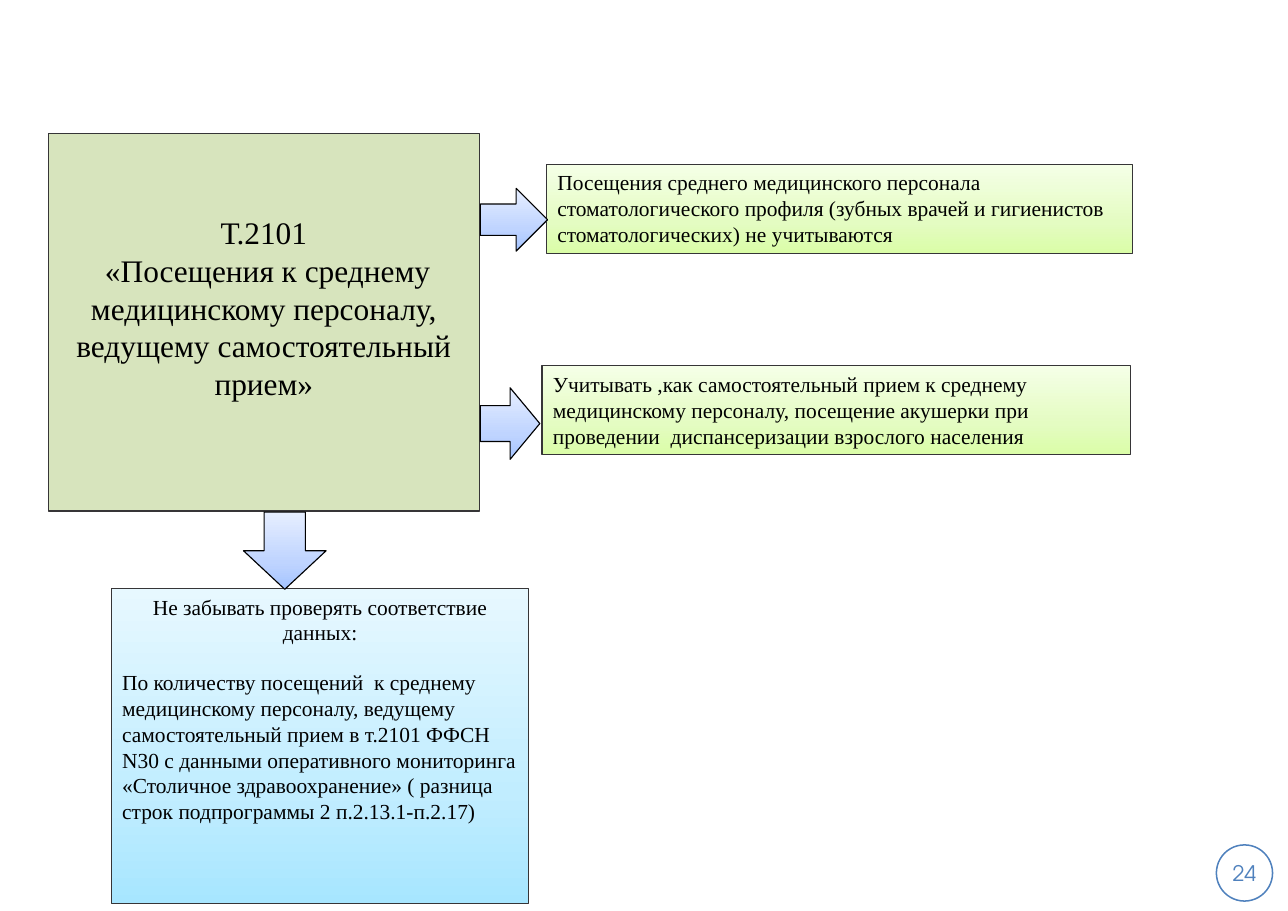
from copy import deepcopy

from pptx import Presentation
from pptx.dml.color import RGBColor
from pptx.enum.shapes import MSO_SHAPE
from pptx.enum.text import MSO_ANCHOR, PP_ALIGN
from pptx.util import Pt

RECT, OVAL = MSO_SHAPE.RECTANGLE, MSO_SHAPE.OVAL
RIGHT, DOWN = MSO_SHAPE.RIGHT_ARROW, MSO_SHAPE.DOWN_ARROW
TOP, MIDDLE = MSO_ANCHOR.TOP, MSO_ANCHOR.MIDDLE
LEFT, CENTER = PP_ALIGN.LEFT, PP_ALIGN.CENTER
PX = 9144
SERIF, SANS = "Times New Roman", "TeX Gyre Adventor"
BLACK, EDGE, BLUE = "000000", "363537", "4F81BD"
SAGE = ["D7E4BD"]
LIME = ["DAFDA7", "E4FCC2", "F5FFE7"]
SKY = ["A7E6FF", "C1EDFF", "E7F8FF"]
STEEL = ["A4C4FF", "BFD4FF", "E6EEFF"]


def color(text):
    """Turn a hex string into a colour."""
    return RGBColor.from_string(text)


def paint(fill, tones):
    """Fill with nothing, one tone, or three tones rising from the bottom."""
    if not tones:
        fill.background()
    elif len(tones) == 1:
        fill.solid()
        fill.fore_color.rgb = color(tones[0])
    else:
        fill.gradient()
        fill.gradient_angle = 90
        first = fill.gradient_stops[0]._gs
        first.addnext(deepcopy(first))
        for stop, place, tone in zip(fill.gradient_stops, (0, 0.35, 1), tones):
            stop.position = place
            stop.color.rgb = color(tone)


def block(slide, kind, box, tones, edge=EDGE, width=0.75):
    """Draw one filled and outlined shape."""
    shape = slide.shapes.add_shape(kind, *(n * PX for n in box))
    shape.shadow.inherit = False
    paint(shape.fill, tones)
    shape.line.color.rgb = color(edge)
    shape.line.width = Pt(width)
    return shape


def write(shape, lines, size, face=SERIF, tone=BLACK, anchor=TOP, pads=(10, 5, 10, 5)):
    """Set lines of (text, alignment, space before) in a shape."""
    frame = shape.text_frame
    frame.word_wrap = True
    frame.vertical_anchor = anchor
    (frame.margin_left, frame.margin_top,
     frame.margin_right, frame.margin_bottom) = (n * PX for n in pads)
    for i, (text, align, gap) in enumerate(lines):
        par = frame.add_paragraph() if i else frame.paragraphs[0]
        par.text = text
        par.alignment = align
        par.space_before = Pt(gap)
        par.font.size = Pt(size)
        par.font.name = face
        par.font.color.rgb = color(tone)


def topic(slide, box):
    """Place the main block that names the table."""
    write(block(slide, RECT, box, SAGE), [
        ("Т.2101", CENTER, 0),
        (" «Посещения к среднему медицинскому персоналу, "
         "ведущему самостоятельный прием»", CENTER, 0),
    ], 20.5, pads=(10, 73, 10, 5))


def rule(slide, box, text):
    """Place one green rule."""
    write(block(slide, RECT, box, LIME), [(text, LEFT, 0)], 14)


def check(slide, box):
    """Place the blue reminder."""
    write(block(slide, RECT, box, SKY), [
        ("Не забывать проверять соответствие данных:", CENTER, 0),
        ("По количеству посещений  к среднему медицинскому персоналу, ведущему "
         "самостоятельный прием в т.2101 ФФСН N30 c данными оперативного "
         "мониторинга", LEFT, 16),
        ("«Столичное здравоохранение» ( разница строк подпрограммы 2 "
         "п.2.13.1-п.2.17)", LEFT, 0),
    ], 14)


def badge(slide, box):
    """Place the page number in its ring."""
    ring = block(slide, OVAL, box, [], BLUE, 1)
    write(ring, [("24", CENTER, 0)], 14, SANS, BLUE, MIDDLE, (0, 0, 0, 0))


def main():
    """Build and save the slide."""
    deck = Presentation()
    deck.slide_width, deck.slide_height = 1169 * PX, 827 * PX
    slide = deck.slides.add_slide(deck.slide_layouts[6])
    badge(slide, (1104, 767, 51, 51))
    topic(slide, (44, 121, 391, 343))
    rule(slide, (496, 149, 532, 81),
         "Посещения среднего медицинского персонала стоматологического профиля "
         "(зубных врачей и гигиенистов стоматологических) не учитываются")
    rule(slide, (492, 332, 534, 81),
         "Учитывать ,как самостоятельный прием к среднему медицинскому персоналу, "
         "посещение акушерки при проведении  диспансеризации взрослого населения")
    check(slide, (101, 534, 379, 286))
    for kind, box in ((RIGHT, (436, 171, 61, 57)), (RIGHT, (436, 352, 54, 65)),
                      (DOWN, (221, 465, 75, 70))):
        block(slide, kind, box, STEEL, BLACK)
    deck.save("out.pptx")


if __name__ == "__main__":
    main()
